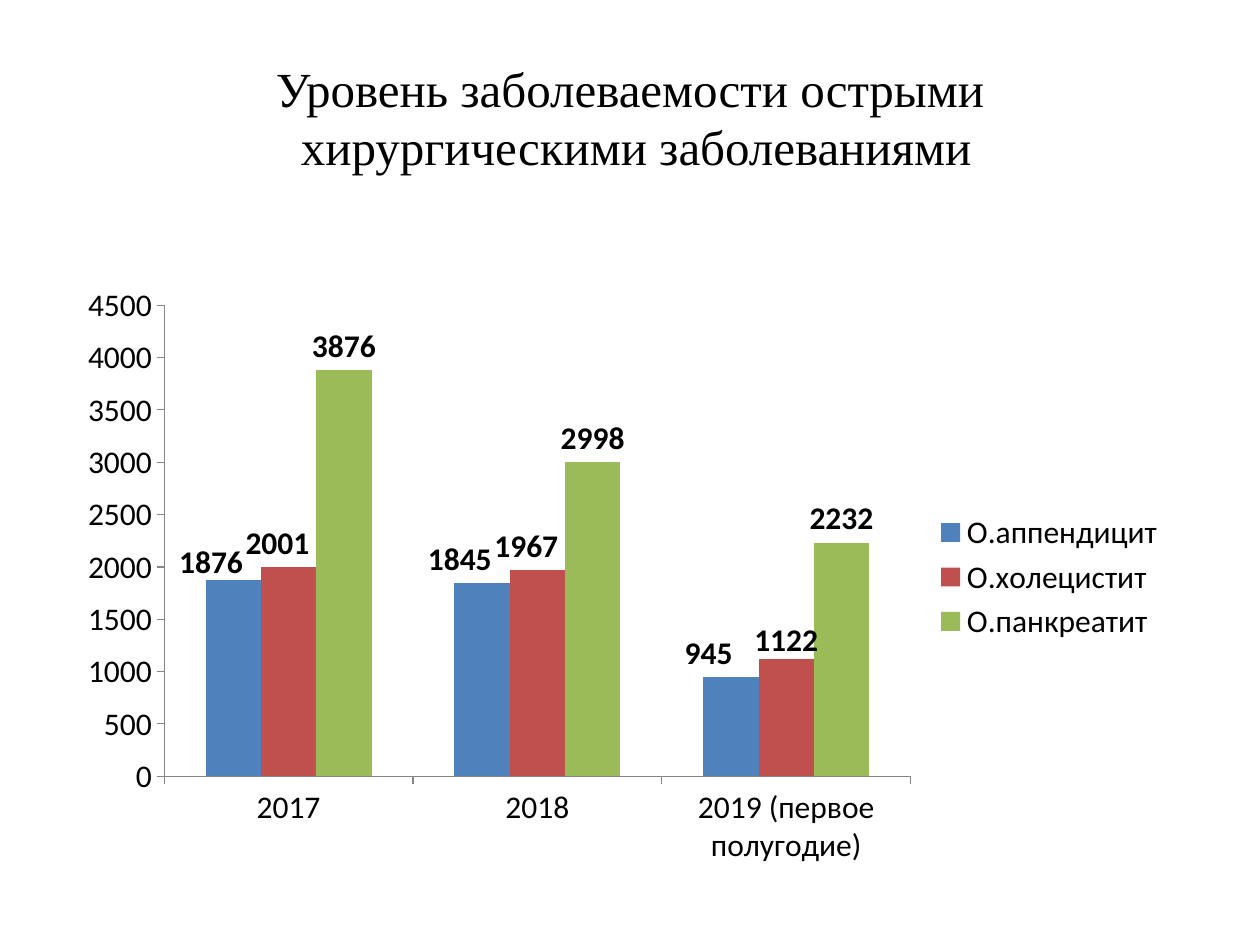
from dataclasses import dataclass

import pptx
import pptx.chart.data
import pptx.dml.color
import pptx.enum.chart
import pptx.enum.text
import pptx.oxml
import pptx.oxml.ns
import pptx.util


@dataclass(frozen=True)
class Theme:
    text: str = "000000"
    background: str = "FFFFFF"
    axis: str = "868686"
    series: tuple = ("4F81BD", "C0504D", "9BBB59")
    title_font: str = "Times New Roman"
    chart_font: str = "Calibri"
    title_size: int = 28
    chart_size: int = 18


def px(length):
    return pptx.util.Emu(round(length * 914400 / 126))


def color(value):
    return pptx.dml.color.RGBColor.from_string(value)


def manual_layout(**values):
    fields = "".join(f'<c:{name} val="{value}"/>' for name, value in values.items())
    namespace = pptx.oxml.ns.nsdecls("c")
    return pptx.oxml.parse_xml(
        f"<c:layout {namespace}><c:manualLayout>{fields}</c:manualLayout></c:layout>"
    )


class SlideBuilder:
    """Builds the elements of one slide in a shared style."""

    def __init__(self, slide, theme):
        self.slide = slide
        self.theme = theme
        slide.background.fill.solid()
        slide.background.fill.fore_color.rgb = color(theme.background)

    def style_font(self, font, name, size, bold=False):
        font.name = name
        font.size = pptx.util.Pt(size)
        font.bold = bold
        font.color.rgb = color(self.theme.text)

    def title(self, lines, left, top, width, height):
        shape = self.slide.shapes.title
        shape.left, shape.top, shape.width, shape.height = map(px, (left, top, width, height))
        frame = shape.text_frame
        frame.vertical_anchor = pptx.enum.text.MSO_ANCHOR.MIDDLE
        paragraph = frame.paragraphs[0]
        paragraph.alignment = pptx.enum.text.PP_ALIGN.CENTER
        for index, line in enumerate(lines):
            if index:
                paragraph.add_line_break()
            run = paragraph.add_run()
            run.text = line
            self.style_font(run.font, self.theme.title_font, self.theme.title_size)

    def column_chart(self, categories, series_values, left, top, width, height):
        data = pptx.chart.data.CategoryChartData()
        data.categories = categories
        for name, values in series_values.items():
            data.add_series(name, values)
        frame = self.slide.shapes.add_chart(
            pptx.enum.chart.XL_CHART_TYPE.COLUMN_CLUSTERED,
            *map(px, (left, top, width, height)), data,
        )
        chart = frame.chart
        chart.has_title = False
        self.style_font(chart.font, self.theme.chart_font, self.theme.chart_size)
        chart.has_legend = True
        chart.legend.position = pptx.enum.chart.XL_LEGEND_POSITION.RIGHT
        chart.legend.include_in_layout = False
        for axis in (chart.category_axis, chart.value_axis):
            axis.has_major_gridlines = False
            axis.major_tick_mark = pptx.enum.chart.XL_TICK_MARK.OUTSIDE
            axis.minor_tick_mark = pptx.enum.chart.XL_TICK_MARK.NONE
            axis.format.line.color.rgb = color(self.theme.axis)
        chart.value_axis.minimum_scale = 0
        chart.value_axis.maximum_scale = 4500
        chart.value_axis.major_unit = 500
        plot = chart.plots[0]
        plot.gap_width = 150
        plot.overlap = 0
        plot.vary_by_categories = False
        for series, fill in zip(plot.series, self.theme.series):
            series.format.fill.solid()
            series.format.fill.fore_color.rgb = color(fill)
            series.invert_if_negative = False
            labels = series.data_labels
            labels.show_value = True
            self.style_font(labels.font, self.theme.chart_font, self.theme.chart_size, True)
        return chart

    def place_plot(self, chart, x, y, w, h):
        area = chart.element.xpath(".//c:plotArea")[0]
        for old in area.xpath("./c:layout"):
            area.remove(old)
        area.insert(0, manual_layout(
            layoutTarget="inner", xMode="edge", yMode="edge", x=x, y=y, w=w, h=h))

    def shift_labels(self, chart, series_index, offsets):
        series = chart.plots[0].series[series_index]
        for index, (x, y) in enumerate(offsets):
            label = series.points[index].data_label
            label.position = pptx.enum.chart.XL_LABEL_POSITION.OUTSIDE_END
            self.style_font(label.font, self.theme.chart_font, self.theme.chart_size, True)
        labels = chart.element.xpath(".//c:ser")[series_index].xpath("./c:dLbls/c:dLbl")
        for label, (x, y) in zip(labels, offsets):
            label.insert(1, manual_layout(x=x, y=y))


def main():
    presentation = pptx.Presentation()
    presentation.slide_width = px(1260)
    presentation.slide_height = px(945)
    slide = presentation.slides.add_slide(presentation.slide_layouts[5])
    builder = SlideBuilder(slide, Theme())
    builder.title(
        ("Уровень заболеваемости острыми", " хирургическими заболеваниями"),
        63, 38, 1134, 158,
    )
    chart = builder.column_chart(
        ("2017", "2018", "2019 (первое полугодие)"),
        {
            "О.аппендицит": (1876, 1845, 945),
            "О.холецистит": (2001, 1967, 1122),
            "О.панкреатит": (3876, 2998, 2232),
        },
        64, 275, 1114, 604,
    )
    builder.place_plot(chart, 0.09, 0.05, 0.67, 0.78)
    builder.shift_labels(chart, 0, ((-0.02, 0.01), (-0.02, 0), (-0.02, 0)))
    builder.shift_labels(chart, 1, ((-0.01, 0), (-0.01, 0), (0, 0.01)))
    presentation.save("out.pptx")


if __name__ == "__main__":
    main()
